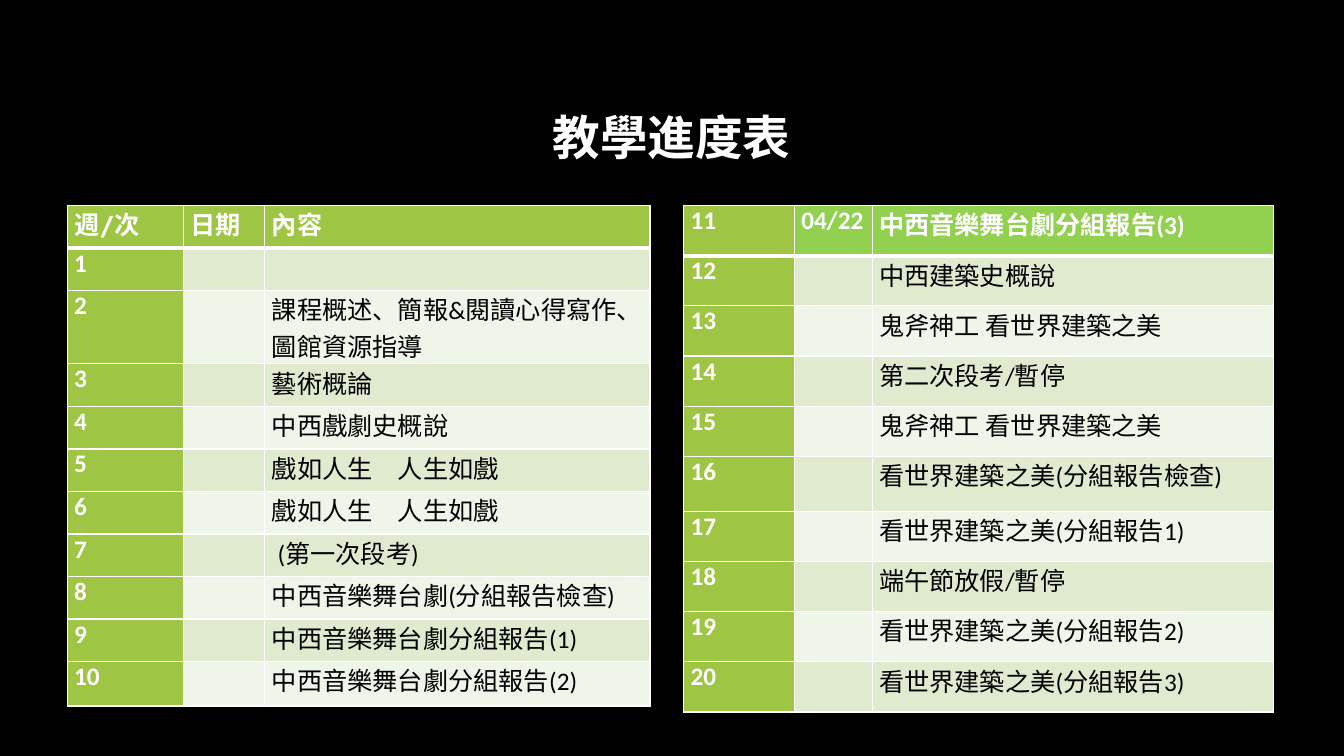
from dataclasses import dataclass

from lxml.etree import SubElement
from pptx import Presentation
from pptx.dml.color import RGBColor
from pptx.enum.text import MSO_ANCHOR, PP_ALIGN
from pptx.oxml.ns import qn
from pptx.util import Inches, Pt

WIDTH, HEIGHT = 13.33, 7.5
TOP = 27.2
GREEN, BRIGHT_GREEN = "9EC544", "92D050"
BANDS = ("DFEACF", "F0F5E9")
WHITE, BLACK = "FFFFFF", "000000"
HEADING_FONT, BODY_FONT = "TeX Gyre Bonum", "Calibri"


@dataclass
class Schedule:
    """One table; lengths are percentages of the slide's width or height."""
    left: float
    columns: list[float]
    row_heights: list[float]
    header: list[str]
    header_font: str
    header_fills: list[str]
    first_week: int
    topics: list[str]


SCHEDULES = [
    Schedule(
        5, [8.63, 6.08, 28.66], [5.63] * 2 + [9.67] + [5.63] * 7 + [5.87],
        ["週/次", "日期", "內容"], HEADING_FONT, [GREEN] * 3, 1,
        ["", "課程概述、簡報&閱讀心得寫作、圖館資源指導", "藝術概論",
         "中西戲劇史概說", "戲如人生　人生如戲", "戲如人生　人生如戲",
         " (第一次段考)", "中西音樂舞台劇(分組報告檢查)",
         "中西音樂舞台劇分組報告(1)", "中西音樂舞台劇分組報告(2)"]),
    Schedule(
        50.86, [8.25, 5.78, 29.86], [6.63] * 5 + [7.3] + [6.63] * 4,
        ["11", "04/22", "中西音樂舞台劇分組報告(3)"], BODY_FONT,
        [GREEN, BRIGHT_GREEN, BRIGHT_GREEN], 12,
        ["中西建築史概說", "鬼斧神工 看世界建築之美", "第二次段考/暫停",
         "鬼斧神工 看世界建築之美", "看世界建築之美(分組報告檢查)",
         "看世界建築之美(分組報告1)", "端午節放假/暫停",
         "看世界建築之美(分組報告2)", "看世界建築之美(分組報告3)"]),
]


def across(percent: float) -> int:
    return Inches(WIDTH * percent / 100)


def down(percent: float) -> int:
    return Inches(HEIGHT * percent / 100)


def color(value: str) -> RGBColor:
    return RGBColor.from_string(value)


def set_font(p, name: str, size: float, value: str, bold: bool) -> None:
    font = p.font
    font.name, font.size, font.bold = name, Pt(size), bold
    font.color.rgb = color(value)


def add_borders(cell, top: float, bottom: float) -> None:
    """White lines on all four sides, one point wide at left and right."""
    tc_pr = cell._tc.get_or_add_tcPr()
    for side, width in (("L", 1), ("R", 1), ("T", top), ("B", bottom)):
        ln = SubElement(tc_pr, qn(f"a:ln{side}"), w=str(Pt(width)))
        fill = SubElement(ln, qn("a:solidFill"))
        SubElement(fill, qn("a:srgbClr"), val=WHITE)


def fill_cell(cell, text: str, row: int, col: int, plan: Schedule) -> None:
    is_header = row == 0
    strong = is_header or col == 0
    cell.margin_left = cell.margin_right = Inches(0.07)
    cell.margin_top = cell.margin_bottom = 0
    add_borders(cell, 3 if row == 1 else 1, 3 if is_header else 1)
    if is_header:
        background = plan.header_fills[col]
    else:
        background = GREEN if col == 0 else BANDS[(row - 1) % 2]
    cell.fill.solid()
    cell.fill.fore_color.rgb = color(background)
    cell.text = text
    set_font(cell.text_frame.paragraphs[0],
             plan.header_font if is_header else BODY_FONT,
             18, WHITE if strong else BLACK, strong)


def add_schedule(s, plan: Schedule) -> None:
    rows = [plan.header] + [[str(week), "", topic] for week, topic
                            in enumerate(plan.topics, plan.first_week)]
    table = s.shapes.add_table(
        len(rows), len(plan.columns), across(plan.left), down(TOP),
        across(sum(plan.columns)), down(sum(plan.row_heights))).table
    for column, width in zip(table.columns, plan.columns):
        column.width = across(width)
    for row, height in zip(table.rows, plan.row_heights):
        row.height = down(height)
    for i, texts in enumerate(rows):
        for j, text in enumerate(texts):
            fill_cell(table.cell(i, j), text, i, j, plan)


def add_title(s, text: str) -> None:
    sp = s.shapes.add_textbox(across(7.5), down(8.93), across(84.92), down(19.33))
    tf = sp.text_frame
    tf.word_wrap = True
    tf.vertical_anchor = MSO_ANCHOR.MIDDLE
    p = tf.paragraphs[0]
    p.text = text
    p.alignment = PP_ALIGN.CENTER
    p.line_spacing = 0.9
    set_font(p, HEADING_FONT, 34, WHITE, True)


def main() -> None:
    prs = Presentation()
    prs.slide_width, prs.slide_height = Inches(WIDTH), Inches(HEIGHT)
    s = prs.slides.add_slide(prs.slide_layouts[6])
    s.background.fill.solid()
    s.background.fill.fore_color.rgb = color(BLACK)
    add_title(s, "教學進度表")
    for plan in SCHEDULES:
        add_schedule(s, plan)
    prs.save("out.pptx")


if __name__ == "__main__":
    main()
